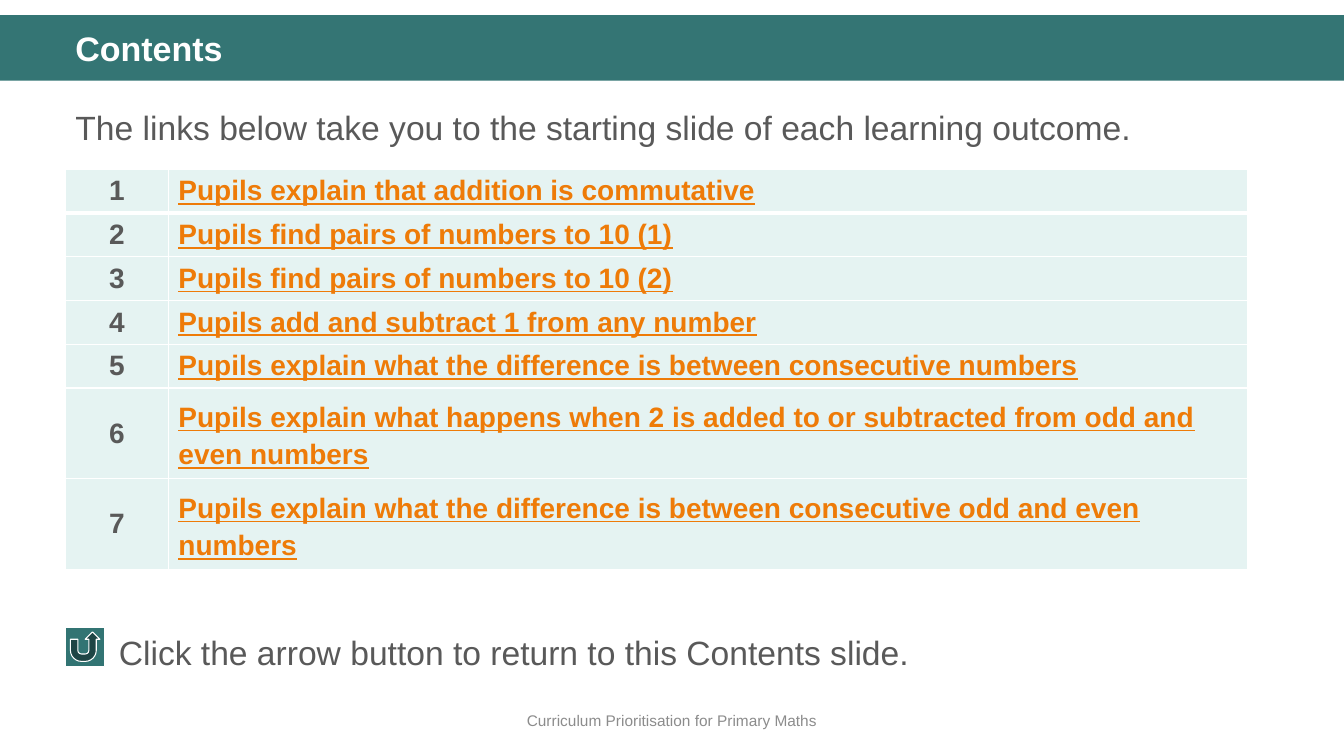
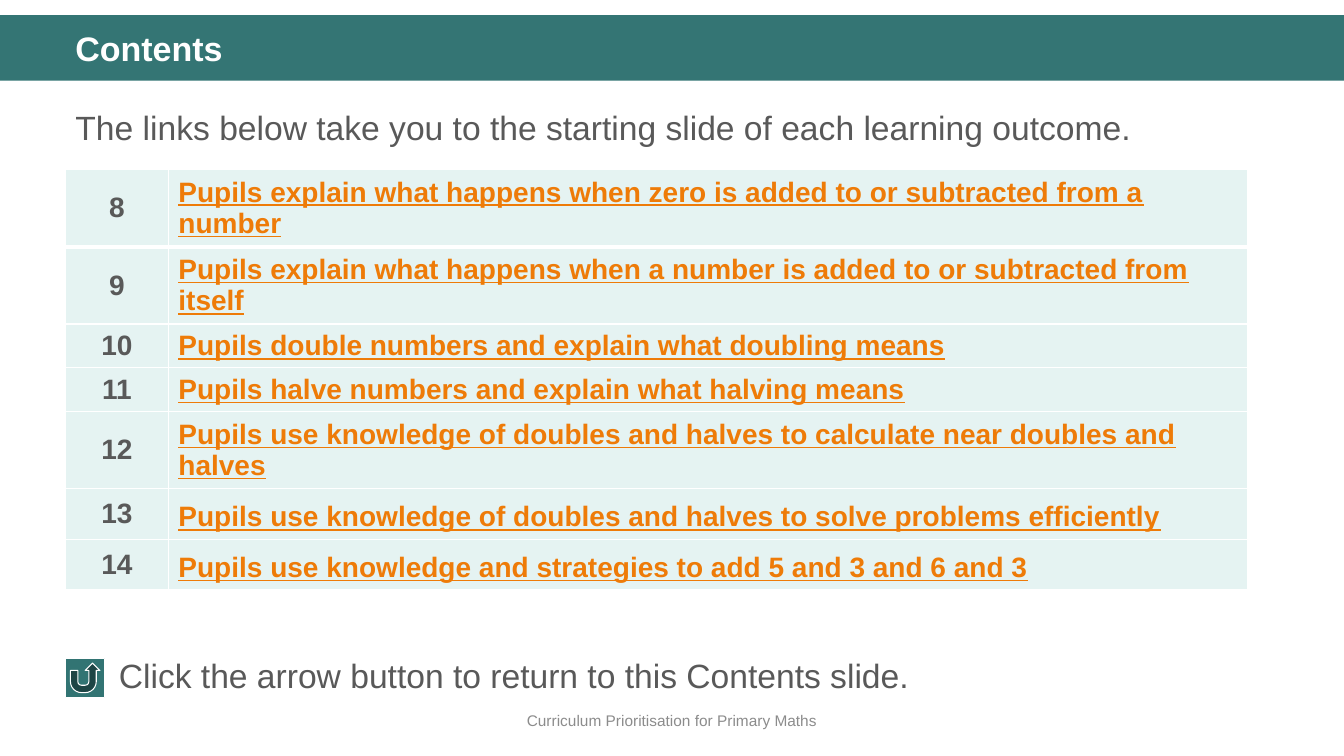
from lxml.etree import SubElement
from pptx import Presentation
from pptx.dml.color import RGBColor
from pptx.enum.shapes import MSO_SHAPE
from pptx.enum.text import MSO_ANCHOR, PP_ALIGN
from pptx.oxml.ns import qn
from pptx.util import Inches, Pt

FONT = "Arial"
WHITE, TEAL, GREY = "FFFFFF", "347574", "595959"
BUTTON, PALE, ORANGE, FAINT = "327473", "E5F3F2", "EE7B08", "8C8C8C"
LEFT, WIDE = 0.65, 13.33
COLS, ROW = (1.02, 10.7), 0.41

# Each slide: button top, text top, first number, topics with line spacing
PAGES = [
    (6.22, 6.22, 1, [
        ("Pupils explain that addition is commutative", 1),
        ("Pupils find pairs of numbers to 10 (1)", 1),
        ("Pupils find pairs of numbers to 10 (2)", 1),
        ("Pupils add and subtract 1 from any number", 1),
        ("Pupils explain what the difference is between consecutive numbers", 1),
        ("Pupils explain what happens when 2 is added to or subtracted from odd and even numbers", 1.2),
        ("Pupils explain what the difference is between consecutive odd and even numbers", 1.2),
    ]),
    (6.53, 6.45, 8, [
        ("Pupils explain what happens when zero is added to or subtracted from a number", 1),
        ("Pupils explain what happens when a number is added to or subtracted from itself", 1),
        ("Pupils double numbers and explain what doubling means", 1),
        ("Pupils halve numbers and explain what halving means", 1),
        ("Pupils use knowledge of doubles and halves to calculate near doubles and halves", 1),
        ("Pupils use knowledge of doubles and halves to solve problems efficiently", 1.2),
        ("Pupils use knowledge and strategies to add 5 and 3 and 6 and 3", 1.2),
    ]),
]


def rgb(code):
    return RGBColor.from_string(code)


def write(frame, text, size=24, color=GREY, bold=False, under=False,
          align=PP_ALIGN.LEFT, space=1):
    para = frame.paragraphs[0]
    para.alignment = align
    para.line_spacing = space
    run = para.add_run()
    run.text = text
    font = run.font
    font.name, font.size = FONT, Pt(size)
    font.bold, font.underline = bold, under
    font.color.rgb = rgb(color)


def label(slide, box, text, anchor=MSO_ANCHOR.TOP, **style):
    frame = slide.shapes.add_textbox(*map(Inches, box)).text_frame
    frame.word_wrap = True
    frame.vertical_anchor = anchor
    write(frame, text, **style)


def block(slide, kind, box, fill, line=None):
    shape = slide.shapes.add_shape(kind, *map(Inches, box))
    shape.shadow.inherit = False
    shape.fill.solid()
    shape.fill.fore_color.rgb = rgb(fill)
    if line:
        shape.line.color.rgb = rgb(line)
        shape.line.width = Pt(0.75)
    else:
        shape.line.fill.background()


def edge(cell, base):
    """Draw white borders, with the given bottom width in points."""
    props = cell._tc.get_or_add_tcPr()
    for side, width in zip("LRTB", (1, 1, 1, base)):
        line = SubElement(props, qn("a:ln" + side), w=str(Pt(width)))
        fill = SubElement(line, qn("a:solidFill"))
        SubElement(fill, qn("a:srgbClr"), val=WHITE)


def topics(slide, first, items):
    box = (LEFT, 1.68, sum(COLS), ROW * len(items))
    table = slide.shapes.add_table(len(items), 2, *map(Inches, box)).table
    table.first_row = table.horz_banding = False
    for col, width in zip(table.columns, COLS):
        col.width = Inches(width)
    for i, (row, (text, space)) in enumerate(zip(table.rows, items)):
        row.height = Inches(ROW)
        for cell in row.cells:
            edge(cell, 1 if i else 3)
            cell.fill.solid()
            cell.fill.fore_color.rgb = rgb(PALE)
            cell.vertical_anchor = MSO_ANCHOR.MIDDLE
        number, topic = row.cells
        write(number.text_frame, str(first + i), size=20, bold=True,
              align=PP_ALIGN.CENTER)
        write(topic.text_frame, text, size=20, color=ORANGE, bold=True,
              under=True, space=space)


def base(slide):
    """Add the title band, the title and the footer."""
    block(slide, MSO_SHAPE.RECTANGLE, (0, 0.15, WIDE, 0.65), TEAL)
    label(slide, (LEFT, 0.27, 12.18, 0.47), "Contents", size=24.3,
          color=WHITE, bold=True, space=0.9)
    label(slide, (0, 6.95, WIDE, 0.4), "Curriculum Prioritisation for Primary Maths",
          anchor=MSO_ANCHOR.MIDDLE, size=11, color=FAINT, align=PP_ALIGN.CENTER)


def main():
    deck = Presentation()
    deck.slide_width, deck.slide_height = Inches(WIDE), Inches(7.5)
    for icon, hint, first, items in PAGES:
        slide = deck.slides.add_slide(deck.slide_layouts[6])
        base(slide)
        label(slide, (LEFT, 0.93, 12.18, 0.6),
              "The links below take you to the starting slide of each learning outcome.",
              space=1.2)
        topics(slide, first, items)
        block(slide, MSO_SHAPE.ACTION_BUTTON_RETURN, (LEFT, icon, 0.39, 0.39),
              BUTTON, WHITE)
        label(slide, (1.08, hint, 11.32, 0.5),
              "Click the arrow button to return to this Contents slide.")
    deck.save("out.pptx")


if __name__ == "__main__":
    main()
